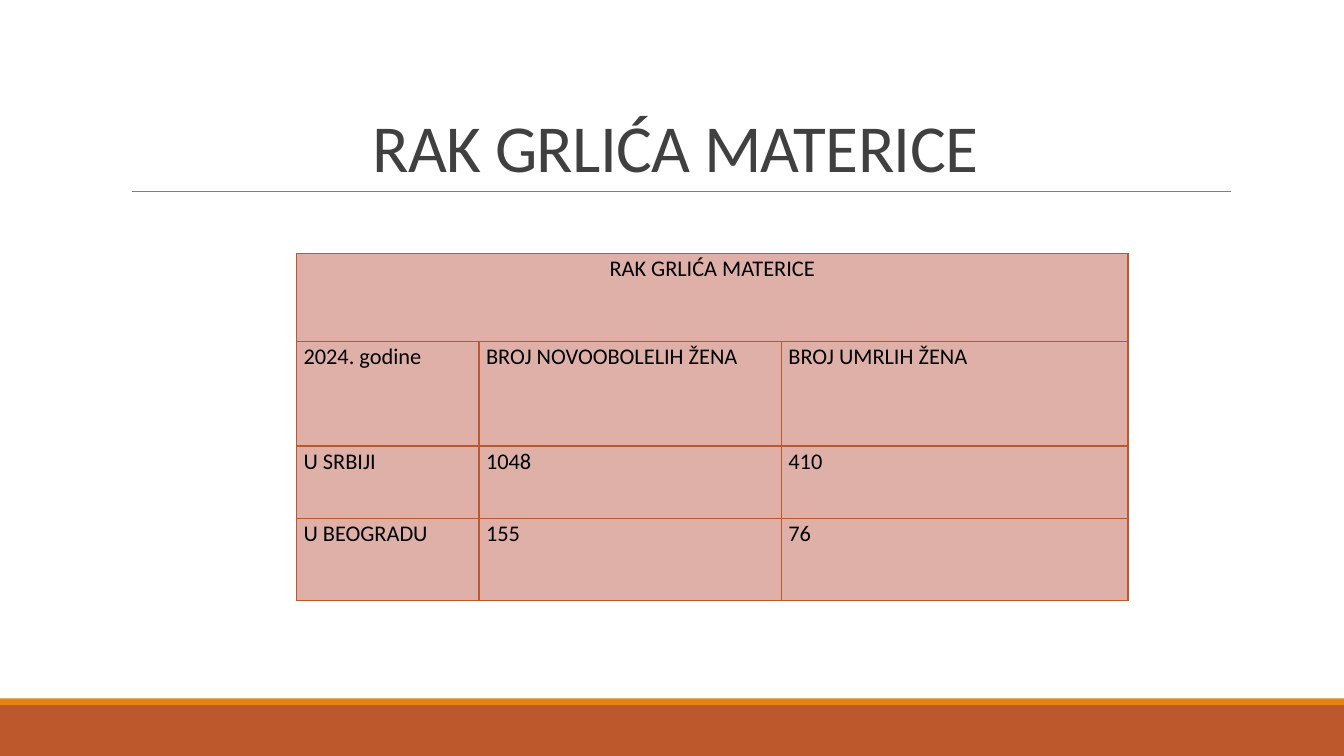
from lxml.etree import SubElement
from pptx import Presentation
from pptx.dml.color import RGBColor
from pptx.enum.shapes import MSO_CONNECTOR, MSO_SHAPE
from pptx.enum.text import MSO_ANCHOR, PP_ALIGN
from pptx.oxml.ns import qn
from pptx.util import Cm, Pt

COLORS = {
    "rust": "BD582C",
    "orange": "E48312",
    "rule": "808080",
    "title": "404040",
    "text": "000000",
    "cell": "DFB0A8",
}
FONT = "Calibri"
SLIDE_WIDTH, SLIDE_HEIGHT = 33.87, 19.05
COLUMN_WIDTHS = [4.6, 7.62, 8.74]
ROW_HEIGHTS = [2.23, 2.63, 1.83, 2.06]
ROWS = [
    ["RAK GRLIĆA MATERICE"],
    ["2024. godine", "BROJ NOVOOBOLELIH ŽENA", "BROJ UMRLIH ŽENA"],
    ["U SRBIJI", "1048", "410"],
    ["U BEOGRADU", "155", "76"],
]


def color(name):
    return RGBColor.from_string(COLORS[name])


def write_text(text_frame, text, size=16, ink="text", align=PP_ALIGN.LEFT,
               line_spacing=1.07, space_after=8, character_spacing=None):
    paragraph = text_frame.paragraphs[0]
    paragraph.alignment = align
    paragraph.line_spacing = line_spacing
    paragraph.space_before = Pt(0)
    paragraph.space_after = Pt(space_after)
    run = paragraph.add_run()
    run.text = text
    run.font.name = FONT
    run.font.size = Pt(size)
    run.font.color.rgb = color(ink)
    if character_spacing is not None:
        run.font._element.set("spc", str(round(character_spacing * 100)))


def add_bar(slide, top, height, fill):
    bar = slide.shapes.add_shape(MSO_SHAPE.RECTANGLE, Cm(0), Cm(top),
                                 Cm(SLIDE_WIDTH), Cm(height))
    bar.shadow.inherit = False
    bar.fill.solid()
    bar.fill.fore_color.rgb = color(fill)
    bar.line.fill.background()


def add_footer(slide, top, height, stripe_height=0.17):
    add_bar(slide, top + stripe_height, height - stripe_height, "rust")
    add_bar(slide, top, stripe_height, "orange")


def add_title(slide, left, top, width, height):
    """Fill the title placeholder and rule a line along its lower edge."""
    title = slide.shapes.title
    title.left, title.top = Cm(left), Cm(top)
    title.width, title.height = Cm(width), Cm(height)
    title.text_frame.word_wrap = True
    title.text_frame.vertical_anchor = MSO_ANCHOR.BOTTOM
    write_text(title.text_frame, "RAK GRLIĆA MATERICE", size=48, ink="title",
               align=PP_ALIGN.CENTER, line_spacing=0.85, space_after=0,
               character_spacing=-0.5)
    bottom = Cm(top + height)
    rule = slide.shapes.add_connector(MSO_CONNECTOR.STRAIGHT, Cm(left + 0.28), bottom,
                                      Cm(left + width + 0.02), bottom)
    rule.line.color.rgb = color("rule")
    rule.line.width = Pt(0.5)
    SubElement(rule._element.spPr, qn("a:effectLst"))


def format_cell(cell):
    cell.margin_left = cell.margin_right = Cm(0.18)
    cell.margin_top = cell.margin_bottom = Cm(0)
    properties = cell._tc.get_or_add_tcPr()
    for side in ("a:lnL", "a:lnR", "a:lnT", "a:lnB"):
        border = SubElement(properties, qn(side), w=str(Pt(1)))
        fill = SubElement(border, qn("a:solidFill"))
        SubElement(fill, qn("a:srgbClr"), val=COLORS["rust"])
    cell.fill.solid()
    cell.fill.fore_color.rgb = color("cell")


def add_case_table(slide, left, top):
    table = slide.shapes.add_table(
        len(ROW_HEIGHTS), len(COLUMN_WIDTHS), Cm(left), Cm(top),
        Cm(sum(COLUMN_WIDTHS)), Cm(sum(ROW_HEIGHTS))).table
    for column, width in zip(table.columns, COLUMN_WIDTHS):
        column.width = Cm(width)
    for row, height in zip(table.rows, ROW_HEIGHTS):
        row.height = Cm(height)
    for cell in table.iter_cells():
        format_cell(cell)
    table.cell(0, 0).merge(table.cell(0, len(COLUMN_WIDTHS) - 1))
    for row_index, texts in enumerate(ROWS):
        align = PP_ALIGN.CENTER if row_index == 0 else PP_ALIGN.LEFT
        for column_index, text in enumerate(texts):
            write_text(table.cell(row_index, column_index).text_frame, text, align=align)


def main():
    presentation = Presentation()
    presentation.slide_width = Cm(SLIDE_WIDTH)
    presentation.slide_height = Cm(SLIDE_HEIGHT)
    slide = presentation.slides.add_slide(presentation.slide_layouts.get_by_name("Title Only"))
    add_footer(slide, top=17.6, height=SLIDE_HEIGHT - 17.6)
    add_title(slide, left=3.05, top=0.79, width=27.94, height=4.04)
    add_case_table(slide, left=7.47, top=6.38)
    presentation.save("out.pptx")


if __name__ == "__main__":
    main()
